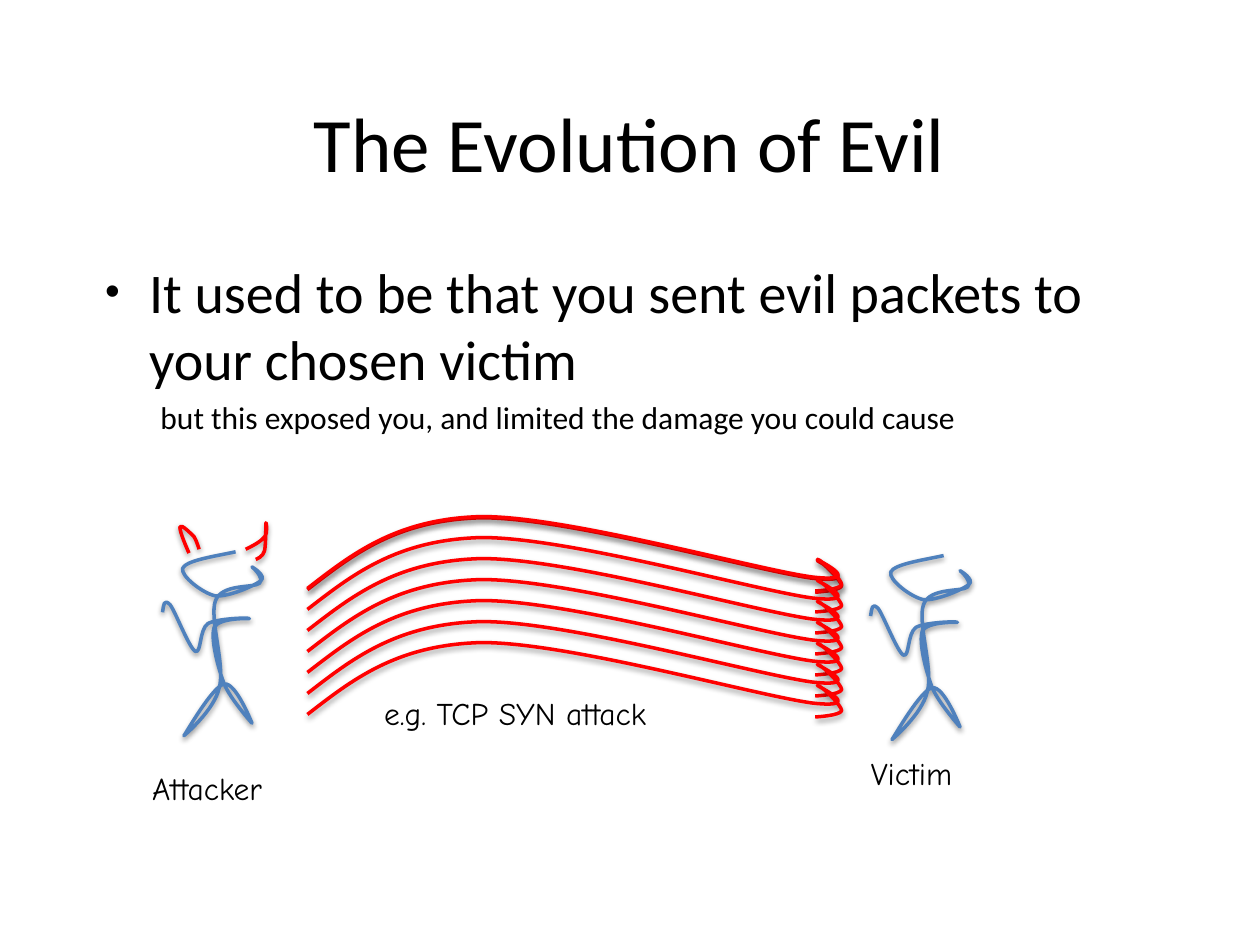
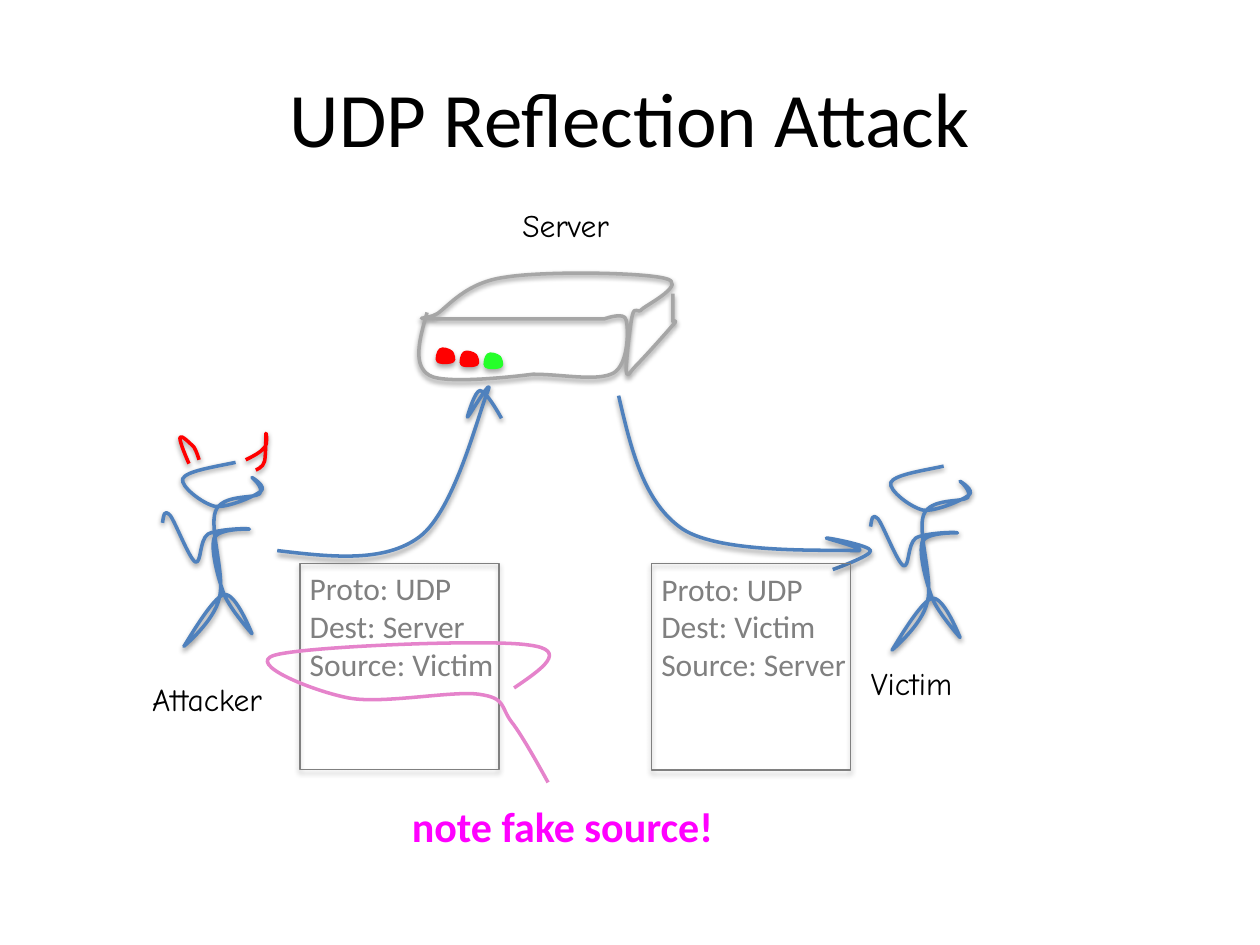
from lxml import etree
from pptx import Presentation
from pptx.dml.color import RGBColor
from pptx.enum.shapes import MSO_SHAPE
from pptx.enum.text import MSO_ANCHOR, MSO_AUTO_SIZE, PP_ALIGN
from pptx.oxml.ns import qn
from pptx.util import Pt

RECTANGLE = MSO_SHAPE.RECTANGLE
MIDDLE, CENTER = MSO_ANCHOR.MIDDLE, PP_ALIGN.CENTER
FIXED, GROW = MSO_AUTO_SIZE.NONE, MSO_AUTO_SIZE.SHAPE_TO_FIT_TEXT

BLACK, BLUE, RED, GREEN = "000000", "4F81BD", "FF0000", "25FF2A"
GREY, SERVER_GREY, PINK, MAGENTA = "808080", "A6A6A6", "E583CB", "FF00FF"
SANS, HAND = "Calibri", "Comic Neue"
INK = 2             # width of hand-drawn lines, in points
UNIT = 0.72         # points in one unit of the sketches below
CURVE_STEPS = 20    # samples per curve when measuring its extent

# Sketches: a start point, then cubic curves (two controls and an end)
# or straight lines (an end)
STICK_FIGURE = [
    (58, 0), (39, 4, 19, 7, 16, 13), (14, 19, 32, 33, 42, 35),
    (52, 36, 73, 27, 78, 23), (83, 19, 71, 12, 71, 12),
    (71, 12, 81, 20, 77, 25), (72, 29, 47, 25, 42, 39),
    (37, 53, 50, 90, 45, 108), (41, 126, 17, 146, 17, 146),
    (18, 145, 40, 106, 49, 105), (58, 103, 71, 136, 71, 136),
    (71, 136, 54, 117, 49, 105), (44, 92, 38, 69, 41, 60),
    (45, 52, 70, 53, 69, 53), (68, 52, 43, 53, 36, 57),
    (29, 62, 31, 81, 26, 79), (21, 76, 10, 47, 6, 42), (1, 37, 1, 42, 0, 48)]
LEFT_HORN = [(21, 1), (17, -8, 13, -18, 14, -20), (15, -22, 22, -15, 25, -12),
             (27, -9, 29, -2, 29, -2)]
RIGHT_HORN = [(66, -2), (72, -5, 78, -8, 81, -12), (84, -15, 82, -25, 82, -23),
              (82, -22, 82, -6, 81, -1), (80, 4, 74, 6, 74, 6)]
EVIL_PACKET = [
    (0, 57), (35, 30, 70, 2, 137, 0), (204, -1, 356, 42, 401, 48),
    (446, 53, 401, 33, 405, 34), (409, 35, 424, 50, 424, 54),
    (423, 58, 403, 59, 403, 59)]
SERVER_CASE = [
    (6, 31), (0, 52, -6, 73, 8, 81), (22, 89, 90, 80, 90, 80),
    (114, 80, 141, 86, 154, 79), (166, 72, 166, 44, 164, 37),
    (163, 30, 147, 36, 147, 36), (14, 36),
    (-9, 35, 5, 37, 14, 32), (23, 26, 37, 7, 68, 3),
    (98, -2, 176, -1, 195, 4), (213, 8, 182, 24, 177, 28),
    (173, 33, 171, 25, 169, 33), (167, 41, 164, 70, 164, 77),
    (165, 84, 166, 79, 172, 73), (178, 67, 196, 47, 201, 41),
    (206, 36, 201, 38, 201, 38), (201, 16)]
LIGHT = [(3, 1), (1, 2, -1, 10, 1, 11), (2, 13, 12, 13, 14, 11),
         (16, 10, 14, 4, 13, 3), (11, 1, 5, -1, 3, 1)]
REQUEST = [
    (0, 130), (42, 135, 85, 140, 113, 119), (141, 98, 160, 20, 167, 4),
    (173, -12, 152, 24, 151, 24), (151, 23, 157, 3, 161, 3),
    (166, 3, 178, 25, 178, 25)]
REPLY = [
    (0, 0), (10, 43, 20, 85, 51, 106), (82, 126, 168, 122, 187, 123),
    (206, 124, 163, 113, 165, 113), (168, 113, 199, 119, 200, 123),
    (201, 127, 170, 138, 170, 138)]
CALLOUT = [
    (196, 36), (218, 21, 240, 6, 208, 2), (177, -3, 30, 3, 6, 10),
    (-18, 17, 38, 39, 65, 44), (92, 49, 147, 38, 168, 41),
    (190, 44, 185, 51, 194, 63), (203, 74, 223, 111, 223, 111)]


def rgb(color):
    return RGBColor.from_string(color)


def place(shape, box):
    shape.left, shape.top, shape.width, shape.height = (Pt(v) for v in box)


def style(paragraph, size, font, color, bold=False):
    for run in paragraph.runs:
        run.font.size, run.font.name, run.font.bold = Pt(size), font, bold
        run.font.color.rgb = rgb(color)


def cast_shadow(shape, opacity, distance):
    effects = shape._element.spPr.find(qn("a:effectLst"))
    shadow = etree.SubElement(
        effects, qn("a:outerShdw"), blurRad=str(Pt(3.1)),
        dist=str(Pt(distance)), dir="5400000", rotWithShape="0")
    tint = etree.SubElement(shadow, qn("a:srgbClr"), val=BLACK)
    etree.SubElement(tint, qn("a:alpha"), val=str(opacity * 1000))


def outline(shape, color, width, fill=None):
    if fill:
        shape.fill.solid()
        shape.fill.fore_color.rgb = rgb(fill)
    else:
        shape.fill.background()
    shape.line.color.rgb = rgb(color)
    shape.line.width = Pt(width)
    shape.shadow.inherit = False


def sample_points(sketch):
    """Yield points along the sketch, to measure its extent."""
    x0, y0 = sketch[0]
    yield x0, y0
    for segment in sketch[1:]:
        x1, y1, x2, y2, x3, y3 = segment if len(segment) == 6 else segment * 3
        for step in range(1, CURVE_STEPS + 1):
            t = step / CURVE_STEPS
            a, b, c, d = (1 - t)**3, 3*t*(1 - t)**2, 3*t*t*(1 - t), t**3
            yield a*x0 + b*x1 + c*x2 + d*x3, a*y0 + b*y1 + c*y2 + d*y3
        x0, y0 = x3, y3


def draw(slide, sketch, x, y, color, fill=None, shadow=True):
    def spot(u, v):
        return Pt(x + u * UNIT), Pt(y + v * UNIT)

    points = [spot(u, v) for u, v in sample_points(sketch)]
    builder = slide.shapes.build_freeform(*points[0], scale=1.0)
    builder.add_line_segments(points[1:], close=False)
    stroke = builder.convert_to_shape()

    # Keep the measured frame; put true curves in it after the start point
    outline_path = stroke._element.spPr.find(".//" + qn("a:path"))
    for sample in list(outline_path)[1:]:
        outline_path.remove(sample)
    for segment in sketch[1:]:
        kind = "a:cubicBezTo" if len(segment) == 6 else "a:lnTo"
        curve = etree.SubElement(outline_path, qn(kind))
        for u, v in zip(segment[::2], segment[1::2]):
            left, top = spot(u, v)
            etree.SubElement(curve, qn("a:pt"), x=str(left - stroke.left),
                             y=str(top - stroke.top))
    if fill:
        etree.SubElement(outline_path, qn("a:close"))

    outline(stroke, color, 0.75 if fill else INK, fill)
    if shadow:
        cast_shadow(stroke, *((35, 1.8) if fill else (38, 1.6)))


def add_label(slide, lines, box, size=18, font=HAND, color=BLACK, bold=False):
    label = slide.shapes.add_textbox(*(Pt(v) for v in box))
    frame = label.text_frame
    frame.word_wrap = False
    frame.auto_size = GROW
    frame.text = lines
    for paragraph in frame.paragraphs:
        style(paragraph, size, font, color, bold)


def set_title(slide, text, box):
    title = slide.shapes.title
    place(title, box)
    frame = title.text_frame
    frame.text = text
    frame.vertical_anchor = MIDDLE
    frame.auto_size = FIXED
    frame.paragraphs[0].alignment = CENTER
    style(frame.paragraphs[0], 44, SANS, BLACK)


def set_body(slide, point, remark, box):
    body = slide.placeholders[1]
    place(body, box)
    frame = body.text_frame
    frame.text = point
    frame.auto_size = FIXED
    frame.add_paragraph().text = remark
    main, sub = frame.paragraphs
    sub.level = 1
    style(main, 32, SANS, BLACK)
    style(sub, 18, SANS, BLACK)
    for paragraph, margin, indent in ((main, 25.2, -25.2), (sub, 31.68, 0)):
        props = paragraph._p.get_or_add_pPr()
        props.set("marL", str(Pt(margin)))
        props.set("indent", str(Pt(indent)))
    bullet = main._p.pPr
    etree.SubElement(bullet, qn("a:buSzPct"), val="75000")
    etree.SubElement(bullet, qn("a:buChar"), char="•")
    etree.SubElement(sub._p.pPr, qn("a:buNone"))


# Attacker on the left and victim on the right, with their names below
def add_cast(slide, top):
    attacker_x, victim_x, victim_y = 92.88, 497.52, top + 2.16
    draw(slide, STICK_FIGURE, attacker_x, top, BLUE)
    for horn in (LEFT_HORN, RIGHT_HORN):
        draw(slide, horn, attacker_x, top, RED)
    draw(slide, STICK_FIGURE, victim_x, victim_y, BLUE)
    add_label(slide, "Attacker", (attacker_x - 13, top + 120.8, 92.16, 28.8))
    add_label(slide, "Victim", (victim_x - 7, victim_y + 109.6, 72.72, 28.8))


def add_packet_stream(slide, x, y):
    draw(slide, EVIL_PACKET, x, y + 0.72, RED)
    for row in range(7):
        draw(slide, EVIL_PACKET, x, y + 12 * row, RED)
    add_label(slide, "e.g. TCP SYN attack", (x + 36.72, y + 97.9, 218.16, 28.8))


def add_server(slide, x, y):
    draw(slide, SERVER_CASE, x, y, SERVER_GREY)
    for u, v, color in ((13, 59, RED), (32, 61.5, RED), (51, 63, GREEN)):
        draw(slide, LIGHT, x + u * UNIT, y + v * UNIT, color, fill=color)
    add_label(slide, "Server", (x + 51.6, y - 42.2, 77.76, 28.8))


def add_packet_header(slide, x, y, dest, source):
    add_label(slide, f"Proto: UDP\nDest: {dest}\nSource: {source}",
              (x - 1.44, y, 121.3, 72.72), font=SANS, color=GREY)
    card = slide.shapes.add_shape(
        RECTANGLE, Pt(x), Pt(y), Pt(113.76), Pt(118.08))
    outline(card, GREY, 0.75)
    cast_shadow(card, 35, 1.8)


def add_evolution_slide(deck):
    slide = deck.slides.add_slide(deck.slide_layouts[1])
    set_title(slide, "The Evolution of Evil", (52.8, 22.32, 614.16, 117.36))
    set_body(slide,
             "It used to be that you sent evil packets to your chosen victim",
             "but this exposed you, and limited the damage you could cause",
             (52.8, 143.28, 614.16, 347.76))
    add_cast(slide, 315.36)
    add_packet_stream(slide, 175.68, 295.2)


def add_reflection_slide(deck):
    slide = deck.slides.add_slide(deck.slide_layouts[5])
    set_title(slide, "UDP Reflection Attack", (36, 21.6, 648, 90))
    add_cast(slide, 264.24)
    add_server(slide, 239.76, 156.24)
    draw(slide, REQUEST, 158.4, 221.04, BLUE)
    draw(slide, REPLY, 353.52, 226.08, BLUE)
    add_packet_header(slide, 171.36, 321.84, "Server", "Victim")
    add_packet_header(slide, 372.24, 322, "Victim", "Server")
    add_label(slide, "note fake source!", (228.24, 454, 190.08, 36),
              24, SANS, MAGENTA, bold=True)
    draw(slide, CALLOUT, 152.64, 367.2, PINK, shadow=False)


def main():
    deck = Presentation()
    deck.slide_width, deck.slide_height = Pt(720), Pt(540)
    add_evolution_slide(deck)
    add_reflection_slide(deck)
    deck.save("out.pptx")


if __name__ == "__main__":
    main()
